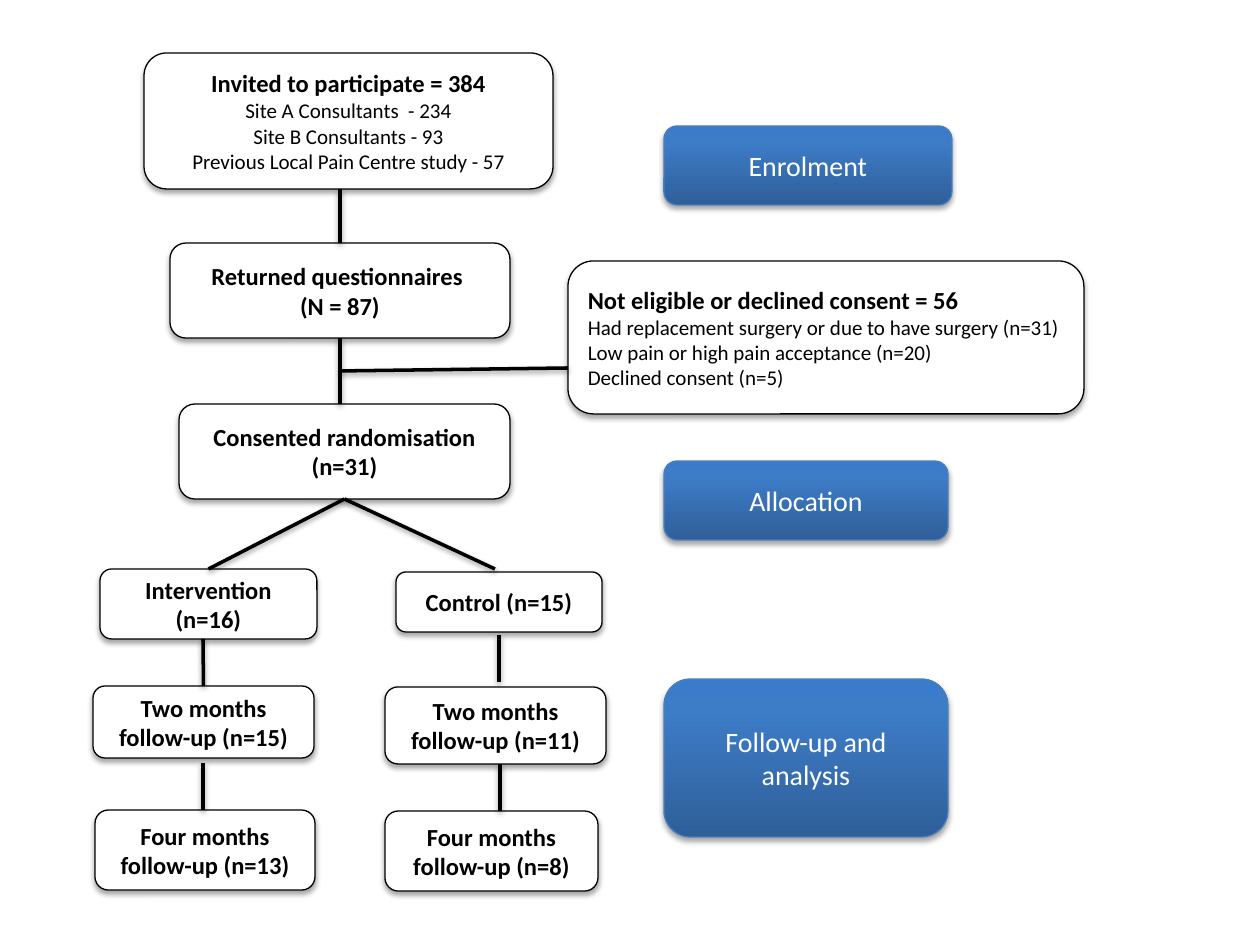
from copy import deepcopy

from lxml.etree import SubElement
from pptx import Presentation
from pptx.dml.color import RGBColor
from pptx.enum.shapes import MSO_CONNECTOR, MSO_SHAPE
from pptx.enum.text import MSO_ANCHOR, PP_ALIGN
from pptx.oxml.ns import qn
from pptx.util import Emu, Pt

PX = 914400 / 126
BLACK, WHITE, BLUE_EDGE = "000000", "FFFFFF", "4B7EBC"
BLUE_STOPS = [(0, "2F5F99"), (0.8, "3D7CC7"), (1, "3A7CCB")]
HEAD = {"size": Pt(14), "bold": True, "name": "Calibri"}
DETAIL = {"size": Pt(12), "bold": False, "name": "Calibri"}
STAGE = {"size": Pt(16), "bold": False, "name": "Calibri"}

STEPS = {
    "returned": (170, 243, 340, 95, ["Returned questionnaires ", "(N = 87)"]),
    "intervention": (100, 569, 217, 70, ["Intervention (n=16)"]),
    "control": (396, 572, 206, 60, ["Control (n=15)"]),
    "consented": (179, 404, 331, 95, ["Consented randomisation (n=31)"]),
    "intervention_2m": (93, 686, 221, 72, ["Two months follow-up (n=15)"]),
    "intervention_4m": (95, 810, 220, 80, ["Four months follow-up (n=13)"]),
    "control_2m": (385, 687, 221, 77, ["Two months follow-up (n=11)"]),
    "control_4m": (385, 811, 213, 80, ["Four months follow-up (n=8)"]),
}
INVITED = ["Invited to participate = 384", "Site A Consultants  - 234",
           "Site B Consultants - 93", "Previous Local Pain Centre study - 57"]
EXCLUDED = ["Not eligible or declined consent = 56",
            "Had replacement surgery or due to have surgery (n=31)",
            "Low pain or high pain acceptance (n=20)", "Declined consent (n=5)"]
STAGES = [
    (664, 461, 284, 79, "Allocation"),
    (664, 126, 288, 79, "Enrolment"),
    (664, 679, 284, 158, "Follow-up and analysis"),
]
LINKS = [
    (340, 189, 340, 243, None, ("returned", 0)),
    (340, 338, 340, 404, ("returned", 2), None),
    (340, 371, 568, 368, None, None),
    (345, 499, 208, 569, ("consented", 2), ("intervention", 0)),
    (345, 499, 495, 569, ("consented", 2), None),
    (203, 639, 203, 686, None, ("intervention_2m", 0)),
    (499, 635, 499, 682, None, None),
    (203, 763, 203, 810, None, None),
    (500, 764, 500, 811, None, None),
]


def px(*values):
    """Turn pixel lengths into EMU."""
    return [Emu(round(v * PX)) for v in values]


def rgb(color):
    """Turn a hex string into a colour."""
    return RGBColor.from_string(color)


def add_shadow(sp, alpha, dist):
    """Give a shape or connector a soft shadow falling straight down."""
    effects = SubElement(sp._element.spPr, qn("a:effectLst"))
    outer = SubElement(effects, qn("a:outerShdw"), blurRad=str(Pt(3.1)),
                       dist=str(Pt(dist)), dir="5400000", rotWithShape="0")
    clr = SubElement(outer, qn("a:srgbClr"), val=BLACK)
    SubElement(clr, qn("a:alpha"), val=str(alpha * 1000))


def fill_gradient(sp):
    """Fill a shape with the blue gradient, dark at the bottom."""
    sp.fill.gradient()
    sp.fill.gradient_angle = 90
    stops = sp._element.spPr.find(f".//{qn('a:gsLst')}")
    stops.append(deepcopy(stops[-1]))
    for stop, (position, color) in zip(sp.fill.gradient_stops, BLUE_STOPS):
        stop.position = position
        stop.color.rgb = rgb(color)


def add_box(s, box, lines, formats, color=BLACK, edge=BLACK, align=PP_ALIGN.CENTER):
    """Add a rounded box with one paragraph per line of text."""
    sp = s.shapes.add_shape(MSO_SHAPE.ROUNDED_RECTANGLE, *px(*box))
    sp.fill.solid()
    sp.fill.fore_color.rgb = rgb(WHITE)
    sp.line.color.rgb = rgb(edge)
    sp.line.width = Pt(0.75)
    add_shadow(sp, 35, 1.8)
    tf = sp.text_frame
    tf.word_wrap = True
    tf.vertical_anchor = MSO_ANCHOR.MIDDLE
    for i, (text, fmt) in enumerate(zip(lines, formats)):
        p = tf.add_paragraph() if i else tf.paragraphs[0]
        p.alignment = align
        r = p.add_run()
        r.text = text
        r.font.color.rgb = rgb(color)
        for key, value in fmt.items():
            setattr(r.font, key, value)
    return sp


def add_stage(s, x, y, w, h, text):
    """Add a blue box naming a stage of the study."""
    sp = add_box(s, (x, y, w, h), [text], [STAGE], WHITE, BLUE_EDGE)
    fill_gradient(sp)


def add_link(s, ends, start, end, boxes):
    """Add a straight line, joined to boxes where a side is given."""
    cxn = s.shapes.add_connector(MSO_CONNECTOR.STRAIGHT, *px(*ends))
    cxn.line.color.rgb = rgb(BLACK)
    cxn.line.width = Pt(2)
    add_shadow(cxn, 38, 1.6)
    for joint, connect in ((start, cxn.begin_connect), (end, cxn.end_connect)):
        if joint:
            name, side = joint
            connect(boxes[name], side)


def main():
    """Build the participant flow slide."""
    prs = Presentation()
    prs.slide_width, prs.slide_height = px(1260, 945)
    s = prs.slides.add_slide(prs.slide_layouts[6])
    boxes = {name: add_box(s, box, lines, [HEAD] * len(lines))
             for name, (*box, lines) in STEPS.items()}
    detailed = [HEAD] + [DETAIL] * 3
    add_box(s, (144, 53, 409, 136), INVITED, detailed)
    add_box(s, (568, 261, 516, 153), EXCLUDED, detailed, align=PP_ALIGN.LEFT)
    for stage in STAGES:
        add_stage(s, *stage)
    for *ends, start, end in LINKS:
        add_link(s, ends, start, end, boxes)
    prs.save("out.pptx")


if __name__ == "__main__":
    main()
